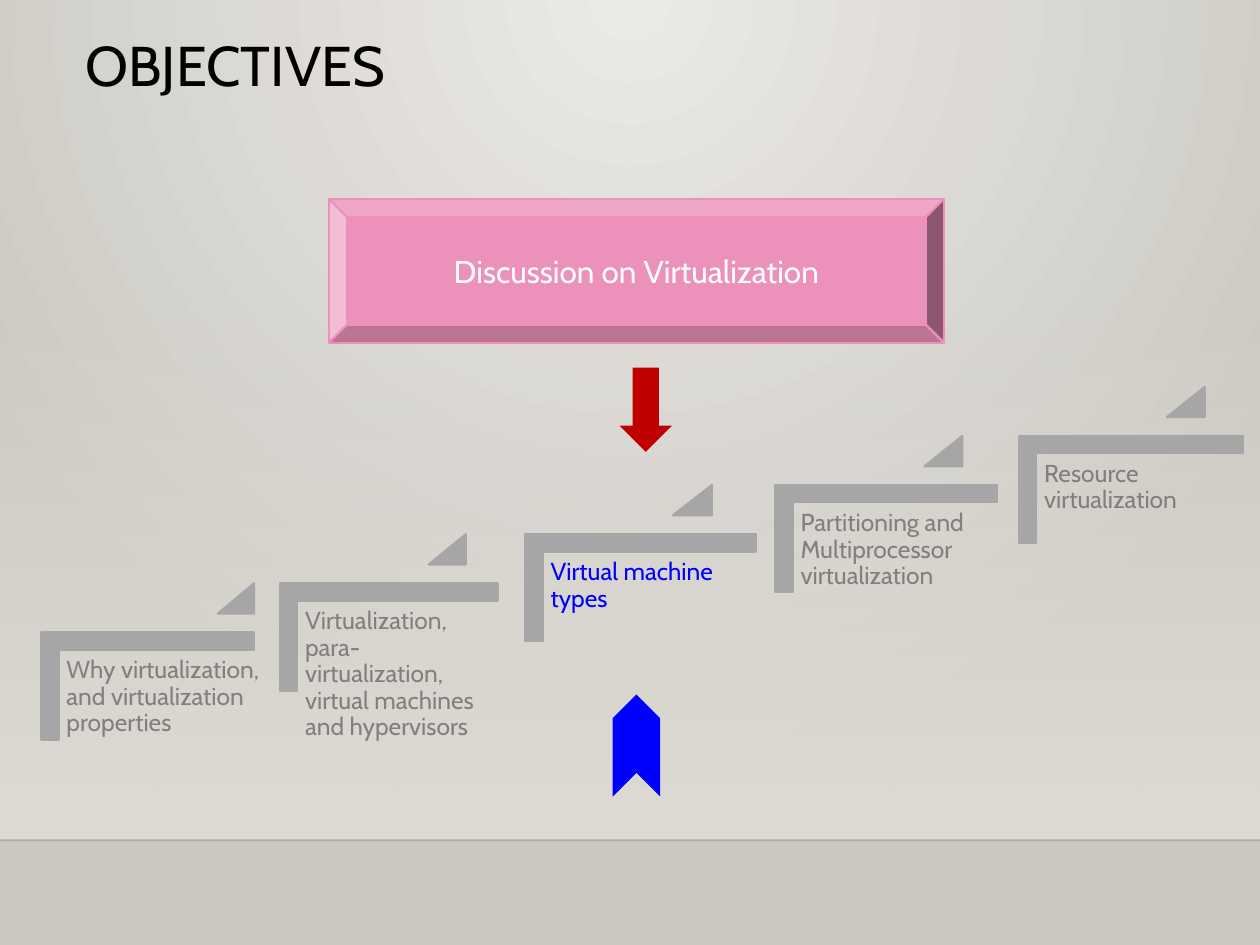
from pptx import Presentation
from pptx.dml.color import RGBColor
from pptx.enum.shapes import MSO_CONNECTOR, MSO_SHAPE
from pptx.enum.text import MSO_ANCHOR, PP_ALIGN
from pptx.oxml import parse_xml
from pptx.oxml.ns import nsdecls, qn
from pptx.util import Cm, Pt

COLORS = {
    "glow": "ECEAE7", "floor": "CAC7C1", "wall": "DFDBD5", "edge": "000001",
    "title": "000000", "topic": "EB91BB", "topic_text": "FFFFFF",
    "down": "C00000", "up": "0000FF", "step": "A6A6A6",
    "step_text": "808080", "current": "0000FF",
}
FONT = "Cabin"
SLIDE_W, SLIDE_H, FLOOR_TOP = 25.4, 19.05, 16.94
RISE, STEP_H, TEXT_OFFSET = 0.99, 2.16, 0.36

# left, width, gap from marker to right end, text width, wording
STEPS = [
    (0.83, 4.29, 0, 4.32, "Why virtualization, and virtualization properties"),
    (5.64, 4.39, 0.64, 3.96,
     "Virtualization, para-virtualization, virtual machines and hypervisors"),
    (10.59, 4.65, 0.89, 4.22, "Virtual machine types"),
    (15.63, 4.47, 0.7, 4.04, "Partitioning and Multiprocessor virtualization"),
    (20.54, 4.52, 0.77, 4.09, "Resource virtualization"),
]
CURRENT_STEP = 2


def rgb(name):
    return RGBColor.from_string(COLORS[name])


def set_gradient(element, stops, shading):
    """Replace the solid fill inside element; stops are (position, colour, alpha)."""
    marks = "".join(
        f'<a:gs pos="{pos * 1000}"><a:srgbClr val="{COLORS[name]}">'
        f'<a:alpha val="{alpha * 1000}"/></a:srgbClr></a:gs>'
        for pos, name, alpha in stops)
    solid = next(element.iter(qn("a:solidFill")))
    solid.getparent().replace(solid, parse_xml(
        f'<a:gradFill {nsdecls("a")} rotWithShape="1">'
        f'<a:gsLst>{marks}</a:gsLst>{shading}</a:gradFill>'))


def add_block(slide, kind, box, color, outlined=False, rotation=0, adjustments=()):
    block = slide.shapes.add_shape(kind, *map(Cm, box))
    block.shadow.inherit = False
    block.rotation = rotation
    block.fill.solid()
    block.fill.fore_color.rgb = rgb(color)
    if outlined:
        block.line.color.rgb = rgb(color)
        block.line.width = Pt(1.25)
    else:
        block.line.fill.background()
    for index, value in enumerate(adjustments):
        block.adjustments[index] = value
    return block


def write(frame, wording, size, color, paragraph_format=None, **frame_format):
    for key, value in {"word_wrap": True, **frame_format}.items():
        setattr(frame, key, value)
    paragraph = frame.paragraphs[0]
    for key, value in (paragraph_format or {}).items():
        setattr(paragraph, key, value)
    run = paragraph.add_run()
    run.text = wording
    for key, value in {"name": FONT, "size": Pt(size)}.items():
        setattr(run.font, key, value)
    run.font.color.rgb = rgb(color)


def add_backdrop(slide):
    slide.background.fill.solid()
    set_gradient(
        slide.background._cSld, [(0, "glow", 100), (100, "floor", 100)],
        '<a:path path="circle">'
        '<a:fillToRect l="43000" t="0" r="43000" b="100000"/></a:path>')
    wall_top = 5.6
    wall = add_block(slide, MSO_SHAPE.RECTANGLE,
                     (0, wall_top, SLIDE_W, FLOOR_TOP - wall_top), "wall")
    set_gradient(wall._element, [(0, "wall", 0), (100, "wall", 100)],
                 '<a:lin ang="5400000" scaled="0"/>')
    edge = slide.shapes.add_connector(
        MSO_CONNECTOR.STRAIGHT, 0, Cm(FLOOR_TOP), Cm(SLIDE_W), Cm(FLOOR_TOP))
    edge.line.color.rgb = rgb("edge")
    edge.line.width = Pt(1)
    edge_color = next(edge._element.iter(qn("a:srgbClr")))
    edge_color.append(parse_xml(f'<a:alpha {nsdecls("a")} val="20000"/>'))
    edge._element.spPr.append(parse_xml(f'<a:effectLst {nsdecls("a")}/>'))


def add_title(slide, box):
    title = slide.shapes.add_textbox(*map(Cm, box))
    write(title.text_frame, "OBJECTIVES", 32, "title", {"line_spacing": 0.9})


def add_topic(slide, box):
    topic = add_block(slide, MSO_SHAPE.BEVEL, box, "topic", outlined=True)
    write(topic.text_frame, "Discussion on Virtualization", 18, "topic_text",
          {"alignment": PP_ALIGN.CENTER}, vertical_anchor=MSO_ANCHOR.MIDDLE)


def add_step(slide, box, marker_gap, text_width, wording, color):
    left, top, width, height = box
    # The corner is turned a quarter, so its own width and height are swapped.
    turn = (width - height) / 2
    add_block(slide, MSO_SHAPE.CORNER, (left + turn, top - turn, height, width),
              "step", outlined=True, rotation=90, adjustments=(0.161, 0.161))
    marker_width = 0.17 * width
    add_block(slide, MSO_SHAPE.ISOSCELES_TRIANGLE,
              (left + width - marker_gap - marker_width, top - RISE,
               marker_width, 0.61),
              "step", outlined=True, adjustments=(1,))
    label = slide.shapes.add_textbox(
        *map(Cm, (left + TEXT_OFFSET, top + TEXT_OFFSET, text_width, 2.84)))
    inset = Cm(0.15)
    write(label.text_frame, wording, 14, color, {"line_spacing": 0.9},
          margin_left=inset, margin_top=inset, margin_bottom=inset,
          margin_right=0 if marker_gap == 0 else inset)


def add_staircase(slide, bottom_step_top):
    for index, (left, width, gap, text_width, wording) in enumerate(STEPS):
        box = (left, bottom_step_top - index * RISE, width, STEP_H)
        color = "current" if index == CURRENT_STEP else "step_text"
        add_step(slide, box, gap, text_width, wording, color)


def add_pointers(slide):
    add_block(slide, MSO_SHAPE.DOWN_ARROW, (12.49, 7.41, 1.06, 1.7), "down")
    add_block(slide, MSO_SHAPE.CHEVRON, (11.8, 14.55, 2.06, 0.96), "up", rotation=270)


def main():
    deck = Presentation()
    deck.slide_width, deck.slide_height = Cm(SLIDE_W), Cm(SLIDE_H)
    slide = deck.slides.add_slide(deck.slide_layouts[6])
    add_backdrop(slide)
    add_title(slide, (1.47, 0.64, 18.26, 2.92))
    add_topic(slide, (6.63, 4.01, 12.4, 2.9))
    add_staircase(slide, 12.75)
    add_pointers(slide)
    deck.save("out.pptx")


if __name__ == "__main__":
    main()
